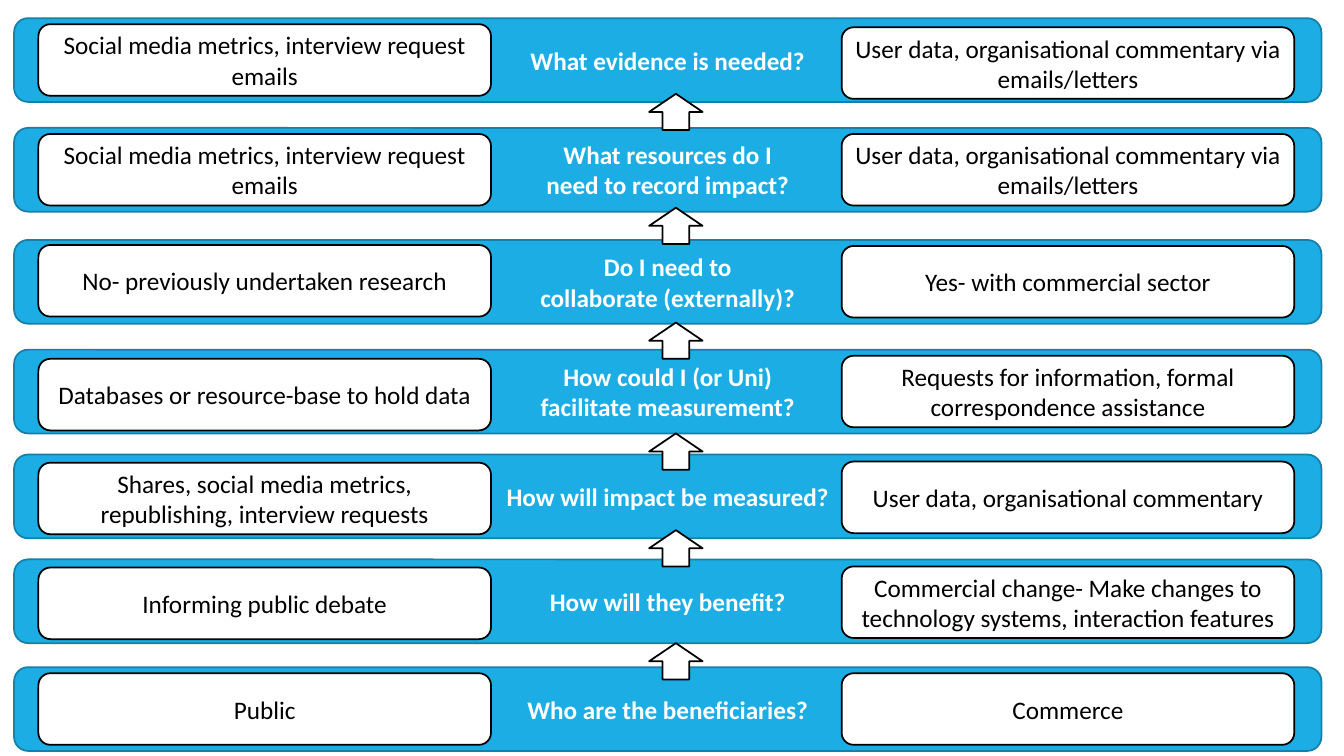
from pptx import Presentation
from pptx.dml.color import RGBColor
from pptx.enum.shapes import MSO_SHAPE
from pptx.enum.text import MSO_ANCHOR, PP_ALIGN
from pptx.util import Pt

COLOURS = {"band": "1CADE4", "band_edge": "1580A9", "white": "FFFFFF", "black": "000000"}
QUESTION_FONT = {"name": "Calibri", "size": Pt(18), "bold": True}
ANSWER_FONT = {"name": "Calibri", "size": Pt(18), "bold": False}

BAND_LEFT, BAND_WIDTH, BAND_HEIGHT = 10.1, 933.8, 59.8
CARD_WIDTH, CARD_HEIGHT = 323.3, 51.1
PUBLIC_INSET, COMMERCE_INSET = 17.3, 591.1
ARROW_INSET, ARROW_WIDTH, ARROW_HEIGHT = 453.6, 38.2, 25.9

# Band top, question, then (answer, drop below band top) for public and commerce,
# and the drop of the arrow that rises into the band (None for the lowest band)
STEPS = [
    (13, "What evidence is needed?",
     ("Social media metrics, interview request emails", 4.3),
     ("User data, organisational commentary via emails/letters", 6.5), 54),
    (91.4, "What resources do I\nneed to record impact?",
     ("Social media metrics, interview request emails", 4.3),
     ("User data, organisational commentary via emails/letters", 4.3), 57),
    (171.4, "Do I need to\ncollaborate (externally)?",
     ("No- previously undertaken research", 3.6),
     ("Yes- with commercial sector", 4.3), 59),
    (249.8, "How could I (or Uni)\nfacilitate measurement?",
     ("Databases or resource-base to hold data", 6.5),
     ("Requests for information, formal correspondence assistance", 4.3), 59.8),
    (324.7, "How will impact be measured?",
     ("Shares, social media metrics, republishing, interview requests", 5.8),
     ("User data, organisational commentary", 5), 54),
    (399.6, "How will they benefit?",
     ("Informing public debate", 5.8),
     ("Commercial change- Make changes to technology systems, interaction features", 5), 59.8),
    (476.6, "Who are the beneficiaries?",
     ("Public", 4.3), ("Commerce", 4.3), None),
]


def colour(key):
    return RGBColor.from_string(COLOURS[key])


def add_outlined(slide, preset, box, fill, edge):
    """Add a flat preset shape in the box (left, top, width, height)."""
    outlined = slide.shapes.add_shape(preset, *(Pt(length) for length in box))
    outlined.shadow.inherit = False
    outlined.fill.solid()
    outlined.fill.fore_color.rgb = colour(fill)
    outlined.line.color.rgb = colour(edge)
    outlined.line.width = Pt(1.25)
    return outlined


def write_centred(holder, words, font_format, ink):
    frame = holder.text_frame
    frame.word_wrap = True
    frame.vertical_anchor = MSO_ANCHOR.MIDDLE
    frame.text = words
    for paragraph in frame.paragraphs:
        paragraph.alignment = PP_ALIGN.CENTER
        for run in paragraph.runs:
            for attribute, value in font_format.items():
                setattr(run.font, attribute, value)
            run.font.color.rgb = colour(ink)


def add_step(slide, box, question, public, commerce):
    """Draw a question band with an answer card on each side."""
    left, top, _, _ = box
    band = add_outlined(slide, MSO_SHAPE.ROUNDED_RECTANGLE, box, "band", "band_edge")
    write_centred(band, question, QUESTION_FONT, "white")
    for inset, (answer, drop) in ((PUBLIC_INSET, public), (COMMERCE_INSET, commerce)):
        card_box = (left + inset, top + drop, CARD_WIDTH, CARD_HEIGHT)
        card = add_outlined(slide, MSO_SHAPE.ROUNDED_RECTANGLE, card_box, "white", "black")
        write_centred(card, answer, ANSWER_FONT, "black")


def add_rising_arrow(slide, box, drop):
    """Draw the arrow that leads up into the band's box."""
    left, top, _, _ = box
    arrow_box = (left + ARROW_INSET, top + drop, ARROW_WIDTH, ARROW_HEIGHT)
    add_outlined(slide, MSO_SHAPE.UP_ARROW, arrow_box, "white", "black")


def main():
    deck = Presentation()
    deck.slide_width, deck.slide_height = Pt(960), Pt(540)
    slide = deck.slides.add_slide(deck.slide_layouts[6])
    boxes = [(BAND_LEFT, step[0], BAND_WIDTH, BAND_HEIGHT) for step in STEPS]

    # Bands with their cards
    for box, (_, question, public, commerce, _) in zip(boxes, STEPS):
        add_step(slide, box, question, public, commerce)

    # Arrows lie over the bands
    for box, (*_, arrow_drop) in zip(boxes, STEPS):
        if arrow_drop is not None:
            add_rising_arrow(slide, box, arrow_drop)

    deck.save("out.pptx")


if __name__ == "__main__":
    main()
